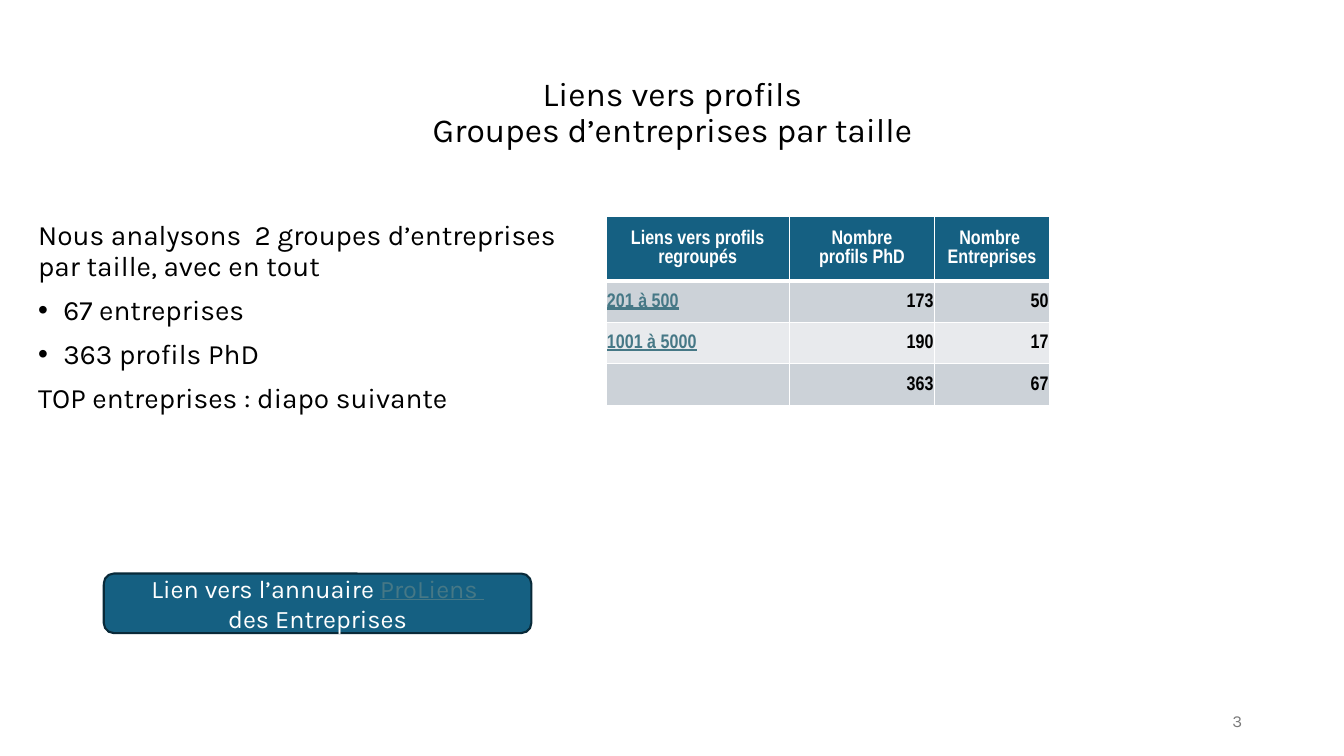
import pptx
import pptx.dml.color
import pptx.enum.shapes
import pptx.enum.text
import pptx.oxml
import pptx.oxml.ns
import pptx.util
from pptx.util import Inches

RGBColor = pptx.dml.color.RGBColor
ALIGN = pptx.enum.text.PP_ALIGN
MIDDLE = pptx.enum.text.MSO_ANCHOR.MIDDLE

BLACK = RGBColor(0x00, 0x00, 0x00)
WHITE = RGBColor(0xFF, 0xFF, 0xFF)
GREY = RGBColor(0x79, 0x79, 0x79)
BLUE = RGBColor(0x15, 0x60, 0x82)
DARK_BLUE = RGBColor(0x09, 0x2A, 0x39)
LINK = RGBColor(0x46, 0x78, 0x86)
BAND_DARK = RGBColor(0xCC, 0xD2, 0xD8)
BAND_LIGHT = RGBColor(0xE8, 0xEA, 0xED)


def write(para, text, size, color=BLACK, font="Karla", bold=False,
          underline=False, align=ALIGN.LEFT, spacing=None):
    """Append text to a paragraph as one run per line."""
    para.alignment = align
    para.line_spacing = spacing
    for index, line in enumerate(text.split("\n")):
        if index:
            para.add_line_break()
        span = para.add_run()
        span.text = line
        span.font.name = font
        span.font.size = pptx.util.Pt(size)
        span.font.bold = bold
        span.font.underline = underline
        span.font.color.rgb = color


def add_border(cell, side, points):
    """Draw a white line on one side (L, R, T or B) of a cell."""
    cell._tc.get_or_add_tcPr().append(pptx.oxml.parse_xml(
        f'<a:ln{side} {pptx.oxml.ns.nsdecls("a")} w="{points * 12700}">'
        f'<a:solidFill><a:srgbClr val="{WHITE}"/></a:solidFill></a:ln{side}>'))


deck = pptx.Presentation()
deck.slide_width = Inches(13.33)
deck.slide_height = Inches(7.5)
page = deck.slides.add_slide(deck.slide_layouts[5])

# Title
title = page.shapes.title
title.left, title.top = Inches(0.92), Inches(0.4)
title.width, title.height = Inches(11.5), Inches(1.45)
title.text_frame.vertical_anchor = MIDDLE
write(title.text_frame.paragraphs[0],
      "Liens vers profils\nGroupes d’entreprises par taille",
      24, align=ALIGN.CENTER, spacing=0.9)

# Summary
summary = page.shapes.add_textbox(Inches(0.28), Inches(2.15),
                                  Inches(5.53), Inches(3.23)).text_frame
summary.word_wrap = True
summary_lines = [
    ("Nous analysons  2 groupes d’entreprises par taille, avec en tout", False),
    ("67 entreprises", True),
    ("363 profils PhD", True),
    ("TOP entreprises : diapo suivante", False),
]
for index, (text, bulleted) in enumerate(summary_lines):
    para = summary.add_paragraph() if index else summary.paragraphs[0]
    if bulleted:
        properties = para._p.get_or_add_pPr()
        properties.set("marL", str(Inches(0.25)))
        properties.set("indent", str(Inches(-0.25)))
        for tag in ('buFont {} typeface="Arial"', 'buChar {} char="•"'):
            properties.append(pptx.oxml.parse_xml(
                f'<a:{tag.format(pptx.oxml.ns.nsdecls("a"))}/>'))
    if index:
        para.space_before = pptx.util.Pt(10)
    write(para, text, 20, spacing=0.9)

# Table of company groups
rows = [
    ["Liens vers profils regroupés", "Nombre\nprofils PhD", "Nombre \nEntreprises"],
    ["201 à 500", "173", "50"],
    ["1001 à 5000", "190", "17"],
    ["", "363", "67"],
]
table = page.shapes.add_table(4, 3, Inches(6.01), Inches(2.15),
                              Inches(4.4), Inches(1.87)).table
for column, width in zip(table.columns, (1.82, 1.44, 1.14)):
    column.width = Inches(width)
for row_index, values in enumerate(rows):
    header = row_index == 0
    table.rows[row_index].height = Inches(0.64 if header else 0.41)
    for column_index, text in enumerate(values):
        cell = table.cell(row_index, column_index)
        cell.vertical_anchor = MIDDLE
        for side in "LRTB":
            thick = (row_index, side) in ((0, "B"), (1, "T"))
            add_border(cell, side, 3 if thick else 1)
        cell.fill.solid()
        if header:
            cell.fill.fore_color.rgb = BLUE
            for index, line in enumerate(text.split("\n")):
                frame = cell.text_frame
                para = frame.add_paragraph() if index else frame.paragraphs[0]
                write(para, line, 14, WHITE, "Arial Narrow", bold=True,
                      align=ALIGN.CENTER)
            continue
        cell.fill.fore_color.rgb = BAND_DARK if row_index % 2 else BAND_LIGHT
        cell.margin_left = cell.margin_right = cell.margin_top = Inches(0.01)
        cell.margin_bottom = 0
        if text:
            linked = column_index == 0
            write(cell.text_frame.paragraphs[0], text, 14,
                  LINK if linked else BLACK, "Arial Narrow", bold=True,
                  underline=linked, align=ALIGN.LEFT if linked else ALIGN.RIGHT)

# Directory button
button = page.shapes.add_shape(
    pptx.enum.shapes.MSO_SHAPE.ROUNDED_RECTANGLE,
    Inches(1.03), Inches(5.69), Inches(4.24), Inches(0.59))
button.shadow.inherit = False
button.fill.solid()
button.fill.fore_color.rgb = BLUE
button.line.color.rgb = DARK_BLUE
button.line.width = pptx.util.Pt(1.5)
label = button.text_frame
label.word_wrap = True
label.vertical_anchor = MIDDLE
write(label.paragraphs[0], "Lien vers l’annuaire ", 18, WHITE, align=ALIGN.CENTER)
write(label.paragraphs[0], "ProLiens ", 18, LINK, underline=True, align=ALIGN.CENTER)
write(label.add_paragraph(), "des Entreprises", 18, WHITE, align=ALIGN.CENTER)

# Slide number
number = page.shapes.add_textbox(Inches(9.42), Inches(6.95),
                                 Inches(3), Inches(0.4)).text_frame
number.word_wrap = True
number.vertical_anchor = MIDDLE
write(number.paragraphs[0], "3", 12, GREY, align=ALIGN.RIGHT)

deck.save("out.pptx")
